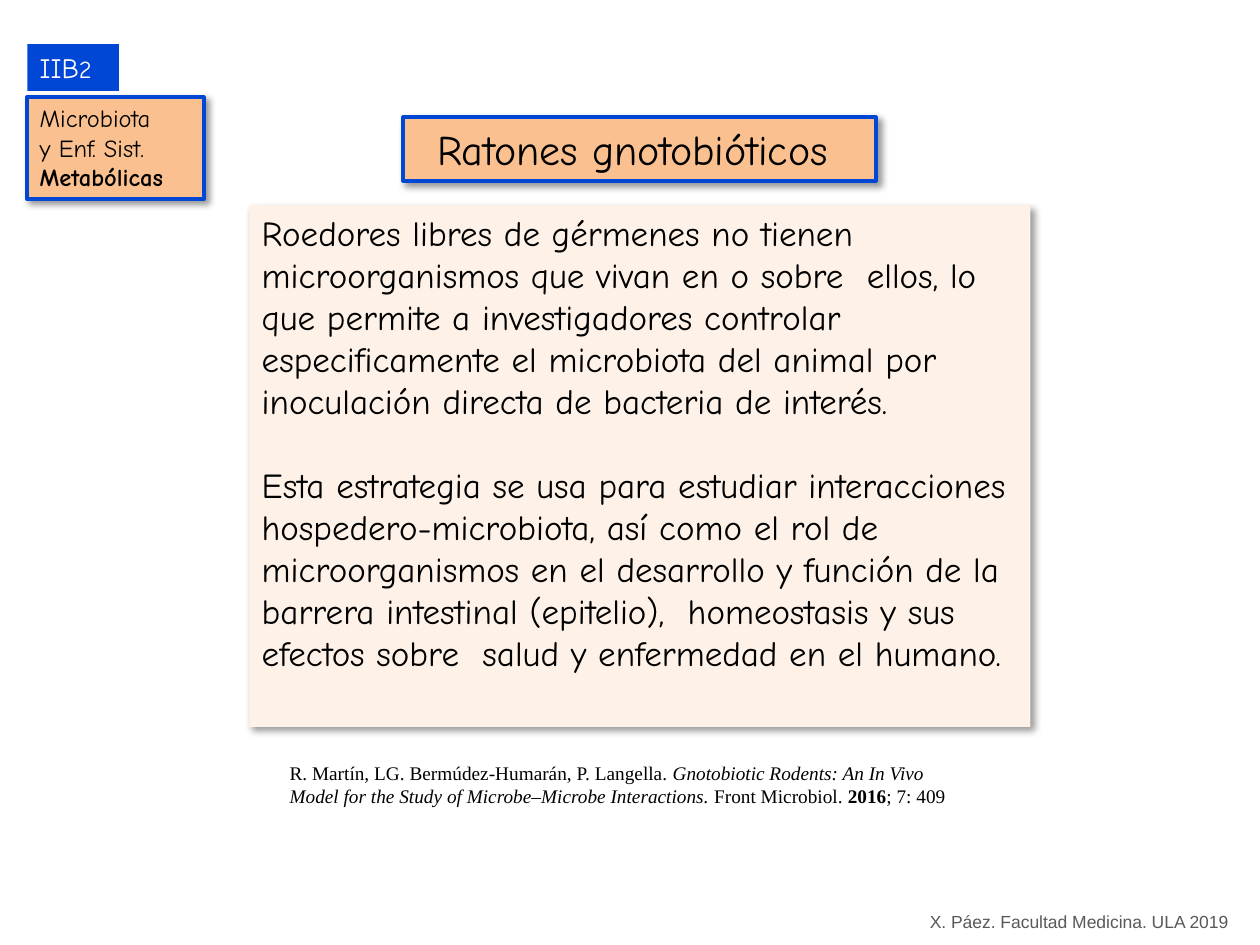
from lxml import etree
from pptx import Presentation
from pptx.dml.color import RGBColor
from pptx.enum.shapes import MSO_SHAPE
from pptx.enum.text import MSO_ANCHOR, MSO_AUTO_SIZE, PP_ALIGN
from pptx.oxml.ns import qn
from pptx.util import Pt

RECT = MSO_SHAPE.RECTANGLE
TOP = MSO_ANCHOR.TOP
FIXED = MSO_AUTO_SIZE.NONE
LEFT = PP_ALIGN.LEFT
CENTER = PP_ALIGN.CENTER

BLACK = RGBColor(0x00, 0x00, 0x00)
WHITE = RGBColor(0xFF, 0xFF, 0xFF)
GRAY = RGBColor(0x59, 0x59, 0x59)
BLUE = RGBColor(0x00, 0x47, 0xD6)
PEACH = RGBColor(0xFA, 0xC0, 0x90)
CREAM = RGBColor(0xFE, 0xF2, 0xE8)

COMIC = "Comic Neue"
SERIF = "Times New Roman"
SANS = "Arial"


def add_shade(shape):
    effects = shape._element.spPr.find(qn("a:effectLst"))
    shade = etree.SubElement(
        effects, qn("a:outerShdw"), blurRad=str(Pt(4)), dist=str(Pt(3)),
        dir="2700000", algn="tl", rotWithShape="0")
    tint = etree.SubElement(shade, qn("a:srgbClr"), val=str(BLACK))
    etree.SubElement(tint, qn("a:alpha"), val="40000")


def paint(shape, fill, edge=None, shade=True):
    shape.fill.solid()
    shape.fill.fore_color.rgb = fill
    if edge is None:
        shape.line.fill.background()
    else:
        shape.line.color.rgb = edge
        shape.line.width = Pt(2.25)
    shape.shadow.inherit = False
    if shade:
        add_shade(shape)


def write(shape, lines, size, face=COMIC, color=BLACK, align=LEFT, wrap=True, gap=0):
    frame = shape.text_frame
    frame.word_wrap = wrap
    frame.auto_size = FIXED
    frame.vertical_anchor = TOP
    for index, runs in enumerate(lines):
        para = frame.add_paragraph() if index else frame.paragraphs[0]
        para.alignment = align
        if index and gap:
            para.space_before = Pt(gap)
        for text, style in runs:
            run = para.add_run()
            run.text = text
            font = run.font
            font.name = face
            font.size = Pt(style.get("size", size))
            font.color.rgb = color
            font.bold = style.get("bold", False)
            font.italic = style.get("italic", False)


def add_panel(slide, box, fill, edge=None, shade=True):
    shape = slide.shapes.add_shape(RECT, *map(Pt, box))
    paint(shape, fill, edge, shade)
    return shape


def add_note(slide, box):
    return slide.shapes.add_textbox(*map(Pt, box))


def set_title(slide, box, text):
    title = slide.shapes.title
    title.left, title.top, title.width, title.height = map(Pt, box)
    paint(title, PEACH, BLUE)
    write(title, [[(text, {})]], 24, align=CENTER, wrap=False)


def main():
    deck = Presentation()
    deck.slide_width = Pt(720)
    deck.slide_height = Pt(540)
    slide = deck.slides.add_slide(deck.slide_layouts[5])

    set_title(slide, (230.4, 67, 270, 36.3), "Ratones gnotobióticos ")

    body = add_panel(slide, (142.5, 117.4, 446.4, 298), CREAM)
    write(body, [
        [("Roedores libres de gérmenes no tienen microorganismos que vivan en "
          "o sobre  ellos, lo que permite a investigadores controlar "
          "especificamente el microbiota del animal por inoculación directa "
          "de bacteria de interés.", {})],
        [("Esta estrategia se usa para estudiar interacciones "
          "hospedero-microbiota, así como el rol de microorganismos en el "
          "desarrollo y función de la barrera intestinal (epitelio),  "
          "homeostasis y sus efectos sobre  salud y enfermedad en el humano.", {})],
    ], 20, gap=24)

    source = add_note(slide, (158.4, 431.3, 403.2, 34))
    write(source, [[
        ("R. Martín, LG. Bermúdez-Humarán, P. Langella. ", {}),
        ("Gnotobiotic Rodents: An In Vivo Model for the Study of "
         "Microbe–Microbe Interactions. ", {"italic": True}),
        ("Front Microbiol. ", {}),
        ("2016", {"bold": True}),
        ("; 7: 409", {}),
    ]], 11, SERIF)

    credit = add_note(slide, (524.2, 517, 186.5, 19.4))
    write(credit, [[("X. Páez. Facultad Medicina. ULA 2019", {})]],
          10, SANS, GRAY, wrap=False)

    code = add_panel(slide, (15.6, 25.3, 52.4, 26.7), BLUE, shade=False)
    write(code, [[("IIB", {}), ("2", {"size": 14})]], 16, color=WHITE)

    topic = add_panel(slide, (15.6, 55.5, 100.8, 58.3), PEACH, BLUE)
    write(topic, [
        [("Microbiota", {})],
        [("y Enf. Sist.", {})],
        [("Metabólicas", {"bold": True})],
    ], 14)

    deck.save("out.pptx")


if __name__ == "__main__":
    main()
